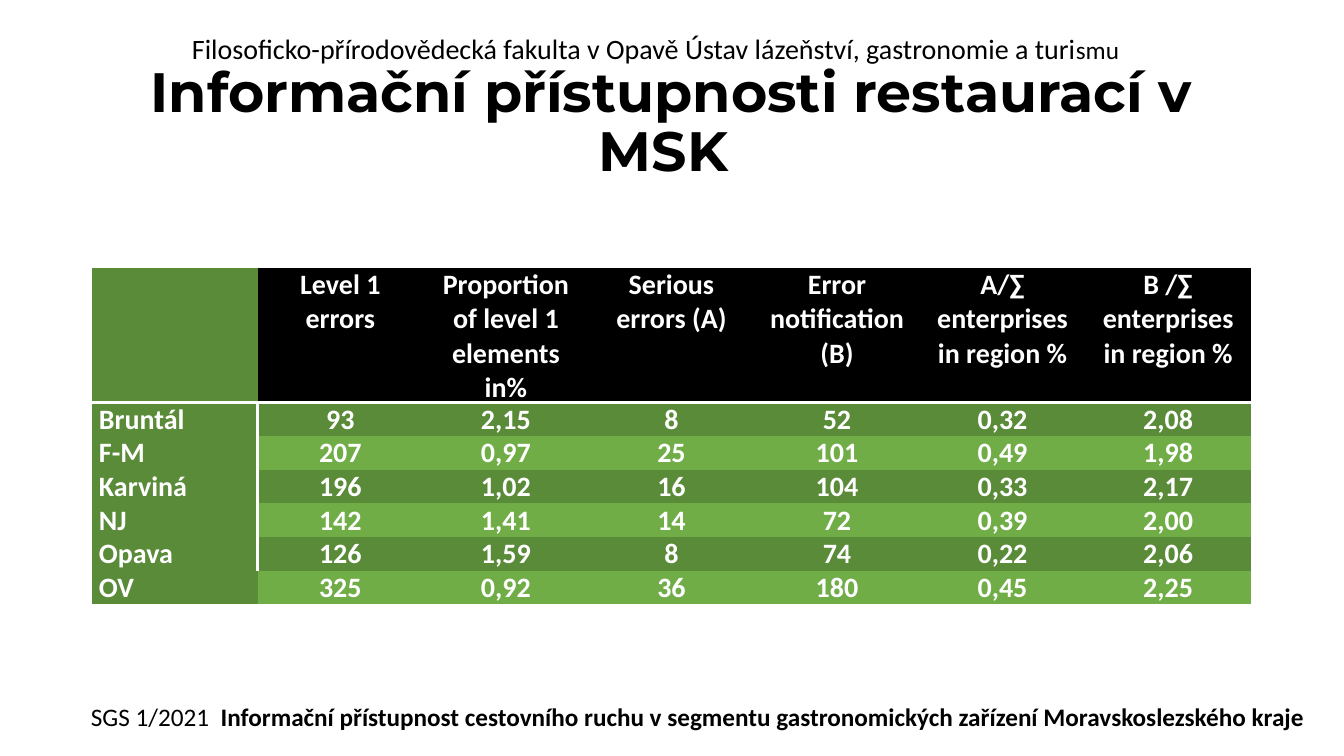
from lxml import etree
from pptx import Presentation
from pptx import util as u
from pptx.dml.color import RGBColor
from pptx.enum import text
from pptx.oxml import ns

TITLE = "Informační přístupnosti restaurací v MSK "
FACULTY = [
    ("Filosoficko-přírodovědecká fakulta v Opavě Ústav lázeňství, gastronomie a turi", 20, False),
    ("smu", 18, False),
]
PROJECT = [
    ("SGS 1/2021  ", 18, False),
    ("Informační přístupnost cestovního ruchu v segmentu gastronomických "
     "zařízení Moravskoslezského kraje", 18, True),
]
ROWS = [
    ("", "Level 1 errors", "Proportion of level 1 elements in%", "Serious errors (A)",
     "Error notification (B)", "A/∑ enterprises in region %", "B /∑ enterprises in region %"),
    ("Bruntál", "93", "2,15", "8", "52", "0,32", "2,08"),
    ("F-M", "207", "0,97", "25", "101", "0,49", "1,98"),
    ("Karviná", "196", "1,02", "16", "104", "0,33", "2,17"),
    ("NJ", "142", "1,41", "14", "72", "0,39", "2,00"),
    ("Opava", "126", "1,59", "8", "74", "0,22", "2,06"),
    ("OV", "325", "0,92", "36", "180", "0,45", "2,25"),
]

BLACK = RGBColor(0x00, 0x00, 0x00)
WHITE = RGBColor(0xFF, 0xFF, 0xFF)
DARK_GREEN = RGBColor(0x5A, 0x8B, 0x39)
LIGHT_GREEN = RGBColor(0x70, 0xAD, 0x47)
PLAIN_TABLE_STYLE = "{2D5ABB26-0587-4C30-8999-92F81FD0307C}"

SLIDE_WIDTH, SLIDE_HEIGHT = 1344, 756
TABLE_BOX = (92, 268, 1159, 336)
HEADER_HEIGHT, ROW_HEIGHT = 55, 21
CELL_MARGIN = 7


def px(length):
    return u.Emu(round(length * 12192000 / SLIDE_WIDTH))


def add_text(slide, box, runs, font_name="Calibri", wrap=True):
    frame = slide.shapes.add_textbox(*map(px, box)).text_frame
    frame.word_wrap = wrap
    paragraph = frame.paragraphs[0]
    paragraph.font.name = font_name
    paragraph.font.color.rgb = BLACK
    for words, size, bold in runs:
        run = paragraph.add_run()
        run.text = words
        run.font.name = font_name
        run.font.size = u.Pt(size)
        run.font.bold = bold
    return frame


def add_border(cell, side):
    properties = cell._tc.get_or_add_tcPr()
    line = etree.SubElement(properties, ns.qn(f"a:ln{side}"), w=str(u.Pt(2)))
    fill = etree.SubElement(line, ns.qn("a:solidFill"))
    etree.SubElement(fill, ns.qn("a:srgbClr"), val=str(WHITE))


def cell_color(row, column):
    if column == 0:
        return DARK_GREEN
    if row == 0:
        return BLACK
    return DARK_GREEN if row % 2 else LIGHT_GREEN


def fill_cell(cell, row, column, words):
    if column == 0 and 0 < row < len(ROWS) - 1:
        add_border(cell, "R")
    if row == 0:
        add_border(cell, "B")
    cell.fill.solid()
    cell.fill.fore_color.rgb = cell_color(row, column)
    cell.margin_left = cell.margin_right = px(CELL_MARGIN)
    cell.margin_top = cell.margin_bottom = 0
    cell.text = words
    paragraph = cell.text_frame.paragraphs[0]
    paragraph.font.name = "Calibri"
    paragraph.font.size = u.Pt(20)
    paragraph.font.bold = True
    paragraph.font.color.rgb = WHITE
    if column:
        paragraph.alignment = text.PP_ALIGN.CENTER
    elif row:
        cell.vertical_anchor = text.MSO_ANCHOR.MIDDLE


def add_region_table(slide):
    left, top, width, height = map(px, TABLE_BOX)
    table_frame = slide.shapes.add_table(len(ROWS), len(ROWS[0]), left, top, width, height)
    table = table_frame.table
    table.horz_banding = False
    table._tbl.tblPr.find(ns.qn("a:tableStyleId")).text = PLAIN_TABLE_STYLE
    for row, values in enumerate(ROWS):
        table.rows[row].height = px(ROW_HEIGHT if row else HEADER_HEIGHT)
        for column, words in enumerate(values):
            fill_cell(table.cell(row, column), row, column, words)
    table_frame.height = height


def main():
    presentation = Presentation()
    presentation.slide_width = px(SLIDE_WIDTH)
    presentation.slide_height = px(SLIDE_HEIGHT)
    slide = presentation.slides.add_slide(presentation.slide_layouts[6])

    title = add_text(slide, (92, 71, 1159, 106), [(TITLE, 39.6, True)], "Montserrat")
    title.vertical_anchor = text.MSO_ANCHOR.MIDDLE
    title.paragraphs[0].alignment = text.PP_ALIGN.CENTER
    title.paragraphs[0].line_spacing = 0.9

    project = add_text(slide, (81, 696, 1243, 40), PROJECT, wrap=False)
    faculty = add_text(slide, (182, 27, 967, 44), FACULTY)
    for frame in (project, faculty):
        frame.auto_size = text.MSO_AUTO_SIZE.SHAPE_TO_FIT_TEXT

    add_region_table(slide)
    presentation.save("out.pptx")


if __name__ == "__main__":
    main()
